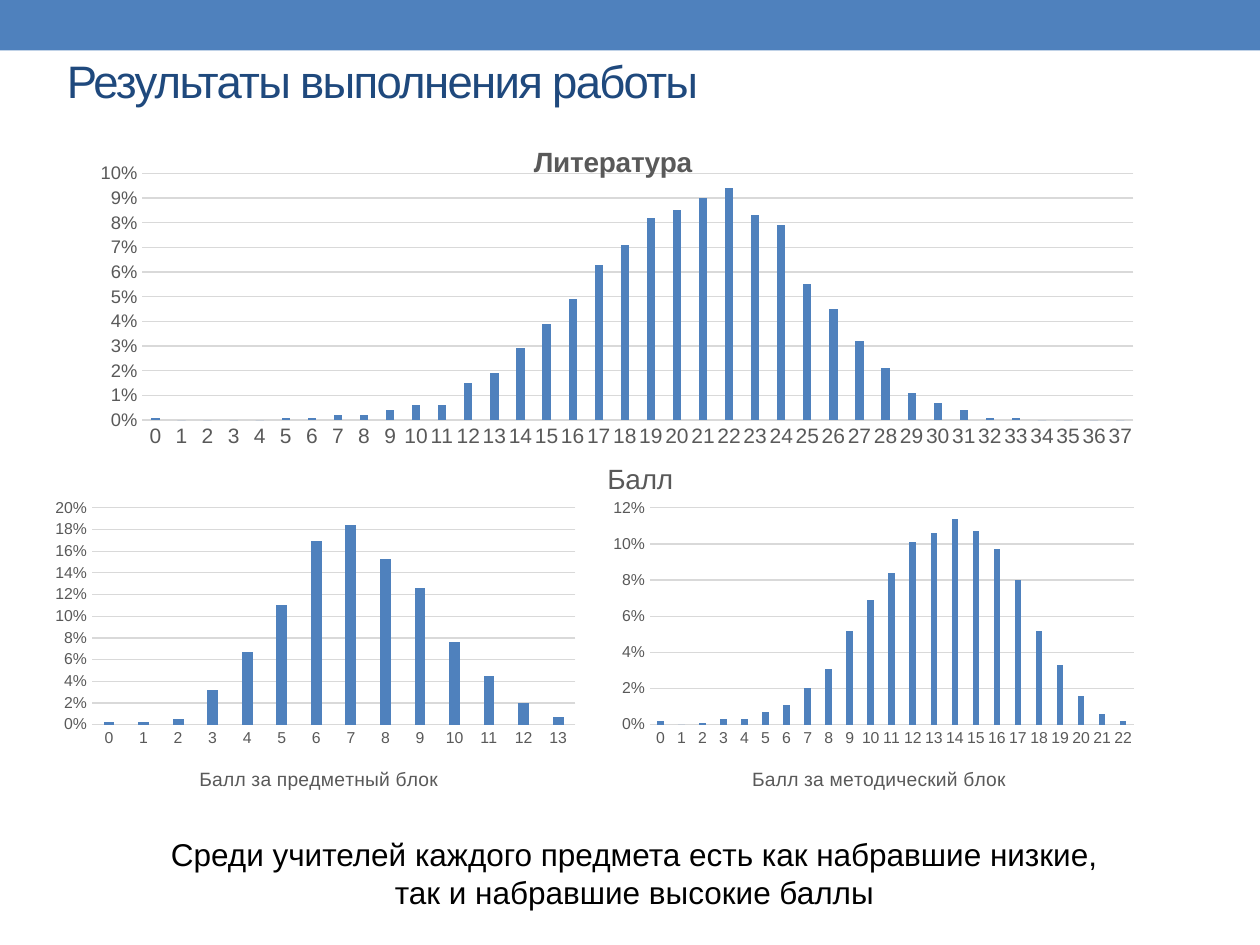
from dataclasses import dataclass

from lxml.etree import SubElement
from pptx import Presentation
from pptx.chart.data import CategoryChartData
from pptx.dml.color import RGBColor
from pptx.enum.chart import XL_CHART_TYPE, XL_TICK_MARK
from pptx.enum.shapes import MSO_SHAPE
from pptx.enum.text import MSO_ANCHOR, PP_ALIGN
from pptx.oxml.ns import qn
from pptx.slide import Slide
from pptx.util import Inches, Pt

BLUE = RGBColor(0x4F, 0x81, 0xBD)
NAVY = RGBColor(0x1F, 0x49, 0x7D)
GRAY = RGBColor(0x59, 0x59, 0x59)
LIGHT = RGBColor(0xD9, 0xD9, 0xD9)
BLACK = RGBColor(0, 0, 0)

TOTAL = [0.001, 0, 0, 0, 0, 0.001, 0.001, 0.002, 0.002, 0.004, 0.006, 0.006, 0.015,
         0.019, 0.029, 0.039, 0.049, 0.063, 0.071, 0.082, 0.085, 0.09, 0.094, 0.083,
         0.079, 0.055, 0.045, 0.032, 0.021, 0.011, 0.007, 0.004, 0.001, 0.001, 0, 0, 0, 0]
SUBJECT = [0.002, 0.002, 0.005, 0.032, 0.067, 0.11, 0.169, 0.184, 0.153, 0.126,
           0.076, 0.045, 0.02, 0.007]
METHOD = [0.002, 0, 0.001, 0.003, 0.003, 0.007, 0.011, 0.02, 0.031, 0.052, 0.069, 0.084,
          0.101, 0.106, 0.114, 0.107, 0.097, 0.08, 0.052, 0.033, 0.016, 0.006, 0.002]


@dataclass
class ScoreSlide:
    """Builds the parts of a score slide in one style."""

    slide: Slide
    family: str = "Arial"

    def style(self, font, size, color, bold=False):
        font.name = self.family
        font.size = Pt(size)
        font.bold = bold
        font.color.rgb = color

    def band(self, height):
        band = self.slide.shapes.add_shape(MSO_SHAPE.RECTANGLE, 0, 0, Inches(10), Inches(height))
        band.shadow.inherit = False
        band.fill.solid()
        band.fill.fore_color.rgb = BLUE
        band.line.fill.background()

    def title(self, text, left, top, width, height):
        title = self.slide.shapes.title
        title.left, title.top = Inches(left), Inches(top)
        title.width, title.height = Inches(width), Inches(height)
        title.text_frame.text = text
        title.text_frame.vertical_anchor = MSO_ANCHOR.MIDDLE
        heading = title.text_frame.paragraphs[0]
        heading.alignment = PP_ALIGN.LEFT
        self.style(heading.font, 26, NAVY)
        heading._p.pPr.find(qn("a:defRPr")).set("spc", "-100")

    def conclusion(self, lines, left, top, width, height):
        box = self.slide.shapes.add_textbox(Inches(left), Inches(top), Inches(width), Inches(height))
        box.text_frame.word_wrap = True
        paragraph = box.text_frame.paragraphs[0]
        paragraph.alignment = PP_ALIGN.CENTER
        for number, line in enumerate(lines):
            if number:
                paragraph.add_line_break()
            paragraph.add_run().text = line
        self.style(paragraph.font, 18, BLACK)

    def place(self, parent, **fractions):
        layout = parent.find(qn("c:layout"))
        if layout is None:
            layout = SubElement(parent, qn("c:layout"))
            parent.insert(0, layout)
        manual = SubElement(layout, qn("c:manualLayout"))
        if "w" in fractions:
            SubElement(manual, qn("c:layoutTarget")).set("val", "inner")
        for side in "xy":
            SubElement(manual, qn(f"c:{side}Mode")).set("val", "edge")
        for side, fraction in fractions.items():
            SubElement(manual, qn(f"c:{side}")).set("val", str(fraction))

    def histogram(self, name, shares, box, plot, caption, caption_at, sizes, top_share, step,
                  heading=None):
        data = CategoryChartData(number_format="0%")
        data.categories = [str(score) for score in range(len(shares))]
        data.add_series(name, shares)
        chart = self.slide.shapes.add_chart(
            XL_CHART_TYPE.COLUMN_CLUSTERED, *map(Inches, box), data).chart
        self.style(chart.font, 10, BLACK)
        chart.has_legend = False
        chart.has_title = heading is not None
        if heading:
            chart.chart_title.text_frame.text = heading
            self.style(chart.chart_title.text_frame.paragraphs[0].font, 16, GRAY, True)
        self.place(chart._chartSpace.chart.plotArea, **plot)

        columns = chart.plots[0]
        columns.gap_width, columns.overlap = 219, -27
        columns.vary_by_categories = False
        fill = columns.series[0].format.fill
        fill.solid()
        fill.fore_color.rgb = BLUE

        caption_size, score_size, share_size = sizes
        scores, percent = chart.category_axis, chart.value_axis
        for axis, size in ((scores, score_size), (percent, share_size)):
            axis.major_tick_mark = axis.minor_tick_mark = XL_TICK_MARK.NONE
            self.style(axis.tick_labels.font, size, GRAY)
        scores.format.line.color.rgb = LIGHT
        scores.format.line.width = Pt(0.75)
        scores.axis_title.text_frame.text = caption
        self.style(scores.axis_title.text_frame.paragraphs[0].font, caption_size, GRAY)
        self.place(scores.axis_title._element, **caption_at)
        skip = SubElement(scores._element, qn("c:tickLblSkip"))
        skip.set("val", "1")
        scores._element.find(qn("c:noMultiLvlLbl")).addprevious(skip)

        percent.minimum_scale, percent.maximum_scale = 0, top_share
        percent.major_unit = step
        percent.tick_labels.number_format = "0%"
        percent.tick_labels.number_format_is_linked = False
        percent.format.line.fill.background()
        percent.has_major_gridlines = True
        percent.major_gridlines.format.line.color.rgb = LIGHT
        percent.major_gridlines.format.line.width = Pt(0.75)


def main():
    deck = Presentation()
    deck.slide_width, deck.slide_height = Inches(10), Inches(7.5)
    page = ScoreSlide(deck.slides.add_slide(deck.slide_layouts[5]))
    page.band(0.4)
    page.title("Результаты выполнения работы", 0.43, 0.36, 9, 0.55)
    page.histogram("Литература", TOTAL, (0.65, 0.99, 8.43, 3),
                   dict(x=0.057, y=0.129, w=0.933, h=0.656),
                   "Балл", dict(x=0.49, y=0.88), (16, 12, 10.5), 0.1, 0.01, "Литература")
    block_plot = dict(x=0.088, y=0.048, w=0.893, h=0.683)
    blocks = (
        ("Балл за предметный блок", SUBJECT, 0.35, 0.28, 0.2),
        ("Балл за методический блок", METHOD, 4.78, 0.27, 0.12),
    )
    for caption, shares, left, caption_x, top_share in blocks:
        page.histogram("Series 1", shares, (left, 3.91, 4.3, 2.52), block_plot,
                       caption, dict(x=caption_x, y=0.85), (11, 9, 9), top_share, 0.02)
    page.conclusion(("Среди учителей каждого предмета есть как набравшие низкие,",
                     "так и набравшие высокие баллы"), 0.98, 6.58, 8.11, 0.71)
    deck.save("out.pptx")


if __name__ == "__main__":
    main()
